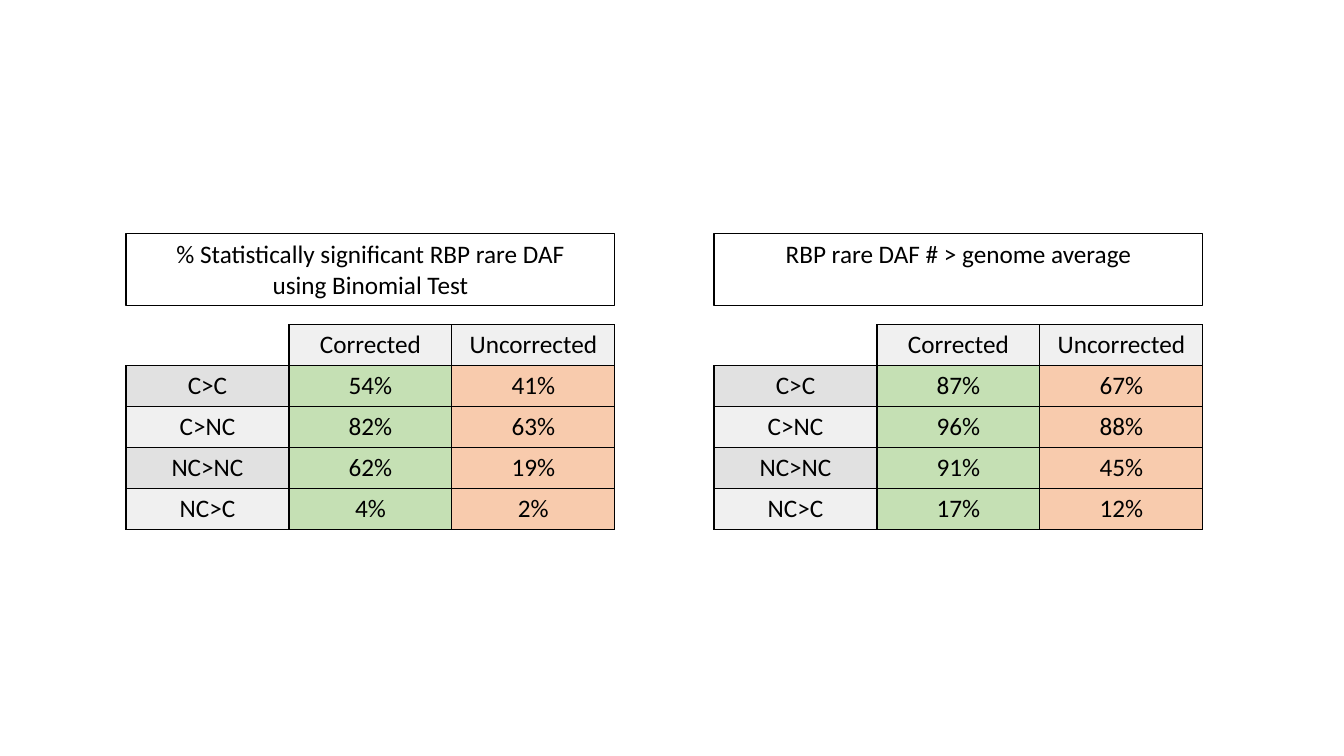
from pptx import Presentation
from pptx.dml.color import RGBColor
from pptx.enum.shapes import MSO_SHAPE as Shape
from pptx.enum.text import MSO_ANCHOR as Anchor, PP_ALIGN as Align
from pptx.oxml import parse_xml
from pptx.oxml.ns import nsdecls
from pptx.util import Pt


def color(value):
    return RGBColor.from_string(value)


def write(frame, text, size=18, font="Calibri", ink="000000", align=Align.CENTER):
    frame.text = text
    for paragraph in frame.paragraphs:
        paragraph.alignment = align
        for run in paragraph.runs:
            run.font.name = font
            run.font.size = Pt(size)
            run.font.color.rgb = color(ink)


presentation = Presentation()
presentation.slide_width, presentation.slide_height = Pt(960), Pt(540)
slide = presentation.slides.add_slide(presentation.slide_layouts[6])

column_width, row_height = 116.4, 29.2
panel_width = 3 * column_width
headings = ["", "Corrected", "Uncorrected"]
labels = ["C>C", "C>NC", "NC>NC", "NC>C"]
panels = [
    (90, "% Statistically significant RBP rare DAF\nusing Binomial Test",
     [("54%", "41%"), ("82%", "63%"), ("62%", "19%"), ("4%", "2%")]),
    (510, "RBP rare DAF # > genome average",
     [("87%", "67%"), ("96%", "88%"), ("91%", "45%"), ("17%", "12%")]),
]

for left, title, values in panels:
    rows = [headings] + [[label, *pair] for label, pair in zip(labels, values)]
    frame = slide.shapes.add_table(len(rows), 3, Pt(left), Pt(232),
                                   Pt(panel_width), Pt(len(rows) * row_height))
    table = frame.table
    table.first_row = table.horz_banding = False
    for column in table.columns:
        column.width = Pt(column_width)
    for row in table.rows:
        row.height = Pt(row_height)

    for row_index, row in enumerate(rows):
        for column_index, text in enumerate(row):
            cell = table.cell(row_index, column_index)
            is_corner = row_index == column_index == 0
            properties = cell._tc.get_or_add_tcPr()
            for side in "LRTB":
                if is_corner and side in "LT":
                    paint = "<a:noFill/>"
                else:
                    paint = '<a:solidFill><a:srgbClr val="000000"/></a:solidFill>'
                properties.append(parse_xml(
                    f'<a:ln{side} w="{Pt(1)}" {nsdecls("a")}>{paint}</a:ln{side}>'))
            write(cell.text_frame, text)
            if is_corner:
                cell.fill.background()
                continue
            label_fill = "E1E1E1" if row_index % 2 else "F0F0F0"
            fills = [label_fill, "C5E0B4", "F8CBAD"]
            cell.fill.solid()
            cell.fill.fore_color.rgb = color(fills[column_index] if row_index else "F0F0F0")

    caption = slide.shapes.add_shape(Shape.RECTANGLE, Pt(left), Pt(167),
                                     Pt(panel_width), Pt(51))
    caption.shadow.inherit = False
    caption.fill.background()
    caption.line.color.rgb = color("000000")
    caption.line.width = Pt(0.75)
    caption.text_frame.word_wrap = True
    caption.text_frame.vertical_anchor = Anchor.TOP
    write(caption.text_frame, title)

presentation.save("out.pptx")
